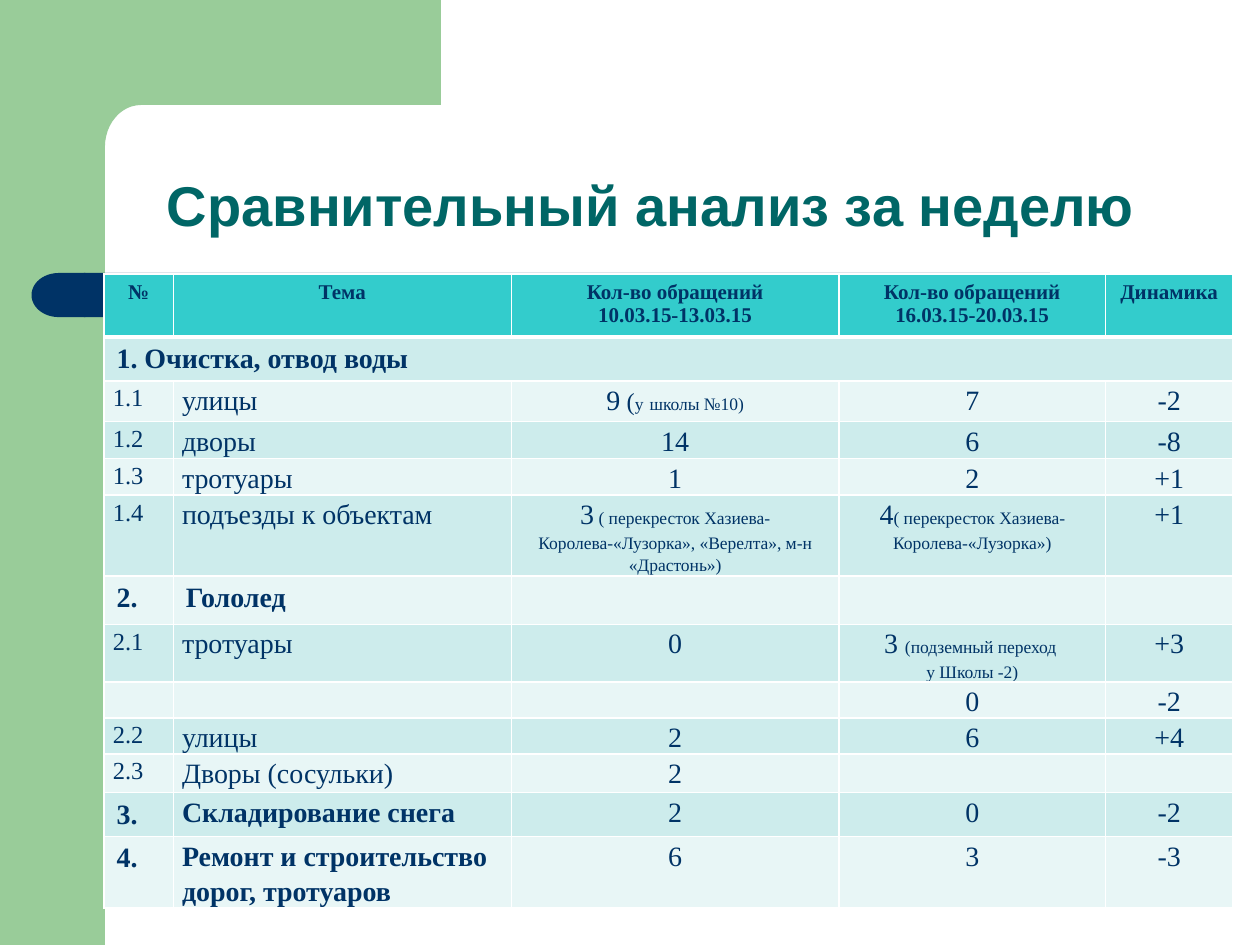
from math import cos, pi, sin

from lxml.etree import SubElement
from pptx import Presentation
from pptx.dml.color import RGBColor
from pptx.enum.shapes import MSO_SHAPE as Shape
from pptx.enum.text import MSO_ANCHOR as Anchor, PP_ALIGN as Align
from pptx.oxml.ns import qn
from pptx.util import Inches, Pt

UNIT = Inches(1) / 12  # the slide is a grid of 120 columns and 90 rows
GREEN, NAVY, TEAL = "99CC99", "003366", "006666"
HEAD, BANDS = "33CCCC", ("E8F6F6", "CDECEC")
SERIF = "Times New Roman"

COLS = (6.6, 32.2, 31.2, 25.4, 12.1)
LINES = (6, 4.1, 3.9, 3.5, 3.5, 7.7, 4.6, 5.5, 3.4, 3.4, 3.7, 4.1, 6.8)

# A cell is a string or a list of paragraphs; a paragraph may list (text, size)
ROWS = [
    ["№", "Тема", ["Кол-во обращений", "10.03.15-13.03.15"],
     ["Кол-во обращений", "16.03.15-20.03.15"], "Динамика"],
    ["1. Очистка, отвод воды", "", "", "", ""],
    ["1.1", "улицы",
     [[("9", 16), (" (", 14), ("у", 10), (" ", 14), ("школы №10)", 10)]],
     "7", "-2"],
    ["1.2", "дворы", "14", "6", "-8"],
    ["1.3", "тротуары", "1", "2", "+1"],
    ["1.4", "подъезды к объектам",
     [[("3", 16), (" ( перекресток Хазиева-Королева-«Лузорка», "
                   "«Верелта», м-н «Драстонь»)", 10)]],
     [[("4", 16), ("( перекресток Хазиева-Королева-«Лузорка»)", 10)]], "+1"],
    ["2.", "Гололед", "", "", ""],
    ["2.1", "тротуары", "0",
     [[("3 ", 16), ("(подземный переход ", 10)], [("у Школы -2)", 10)]], "+3"],
    ["", "", "", "0", "-2"],
    ["2.2", "улицы", "2", "6", "+4"],
    ["2.3", "Дворы (сосульки)", "2", "", ""],
    ["3.", "Складирование снега", "2", "0", "-2"],
    ["4.", "Ремонт и строительство дорог, тротуаров", "6", "3", "-3"],
]
GROUPS = (1, 6, 11, 12)  # rows with a bold heading
ROOMY = (0, 1, 6)        # rows with the default cell margins


def rgb(code):
    return RGBColor.from_string(code)


def grid(*vals):
    return [round(v * UNIT) for v in vals]


def style(run, size, color, bold, face):
    font = run.font
    font.size, font.bold, font.name = Pt(size), bold, face
    font.color.rgb = rgb(color)


def paint(shape, color):
    shape.shadow.inherit = False
    shape.fill.solid()
    shape.fill.fore_color.rgb = rgb(color)
    shape.line.fill.background()


def add_frame(slide, left, top, width, height):
    """Green band at the left and its arm along the top."""
    shapes = slide.shapes
    band = shapes.add_shape(Shape.RECTANGLE, *grid(left, top, width / 12, height))
    paint(band, GREEN)
    edge, low = left + width / 12, top + height / 9  # inner corner
    rx, ry = width / 35, height / 22.5
    turns = [pi / 2 * i / 12 for i in range(13)]
    curve = [(edge + rx * (1 - sin(t)), low + ry * (1 - cos(t))) for t in turns]
    start, end = left + width / 20, left + width * 0.35
    foot = top + height * 0.17
    points = [(end, top), (end, low), *curve, (edge, foot),
              (start, foot), (start, top)]
    first, *rest = [grid(*point) for point in points]
    build = shapes.build_freeform(*first)
    build.add_line_segments(rest, close=True)
    paint(build.convert_to_shape(), GREEN)


def add_bar(slide, left, top, width, height):
    """Navy bar with a round left end that overlaps it a little."""
    cap = width * 0.053
    lap = cap * 0.97
    bar = slide.shapes.add_shape(
        Shape.RECTANGLE, *grid(left + lap, top, width - lap, height))
    tip = slide.shapes.add_shape(
        Shape.FLOWCHART_DELAY, *grid(left, top, cap, height))
    tip.rotation = 180
    for part in (bar, tip):
        paint(part, NAVY)


def add_title(slide, *box):
    title = slide.shapes.title
    title.left, title.top, title.width, title.height = grid(*box)
    frame = title.text_frame
    frame.text = "Сравнительный анализ за неделю"
    frame.word_wrap, frame.vertical_anchor = True, Anchor.BOTTOM
    para = frame.paragraphs[0]
    para.alignment, para.line_spacing = Align.CENTER, 0.9
    style(para.runs[0], 32, TEAL, True, "Arial")


def add_edges(cell, row):
    props = cell._tc.get_or_add_tcPr()
    for side in "LRTB":
        thick = (row, side) in ((0, "B"), (1, "T"))
        line = SubElement(props, qn("a:ln" + side), w=str(Pt(3 if thick else 1)))
        fill = SubElement(line, qn("a:solidFill"))
        SubElement(fill, qn("a:srgbClr"), val="FFFFFF")


def fill_cell(cell, data, row, col):
    bold = row == 0 or row in GROUPS and col < 2
    roomy = row in ROOMY or bold and col == 0
    size = 12 if row == 0 else 14 if col == 0 and not bold else 16
    add_edges(cell, row)
    cell.fill.solid()
    cell.fill.fore_color.rgb = rgb(BANDS[row % 2] if row else HEAD)
    cell.margin_left = cell.margin_right = Inches(0.1 if roomy else 0.07)
    cell.margin_top = cell.margin_bottom = Inches(0.05 if roomy else 0)
    frame = cell.text_frame
    if not data:
        SubElement(frame.paragraphs[0]._p, qn("a:endParaRPr"), sz="1200")
        return
    for i, item in enumerate(data if isinstance(data, list) else [data]):
        para = frame.add_paragraph() if i else frame.paragraphs[0]
        center = row == 0 or col > 1
        para.alignment = Align.CENTER if center else Align.LEFT
        para.line_spacing = 1.0 if roomy else 1.15
        for text, pts in [(item, size)] if isinstance(item, str) else item:
            run = para.add_run()
            run.text = text
            style(run, pts, NAVY, bold, SERIF)


def add_grid(slide, left, top, width, height):
    """Table of requests by topic for two weeks."""
    table = slide.shapes.add_table(
        len(ROWS), len(COLS), *grid(left, top, width, height)).table
    for col, share in zip(table.columns, COLS):
        col.width = round(width * UNIT * share / sum(COLS))
    for line, share in zip(table.rows, LINES):
        line.height = round(height * UNIT * share / sum(LINES))
    for r, row in enumerate(ROWS):
        for c, data in enumerate(row):
            fill_cell(table.cell(r, c), data, r, c)
    table.cell(1, 0).merge(table.cell(1, len(COLS) - 1))


def main():
    deck = Presentation()
    deck.slide_width, deck.slide_height = Inches(10), Inches(7.5)
    slide = deck.slides.add_slide(deck.slide_layouts[5])
    add_frame(slide, 0, 0, 120, 90)
    add_bar(slide, 3, 26, 97, 4.2)
    add_title(slide, 10, 10, 104, 13.3)
    add_grid(slide, 9.9, 26.1, 107.5, 60.2)
    deck.save("out.pptx")


if __name__ == "__main__":
    main()
